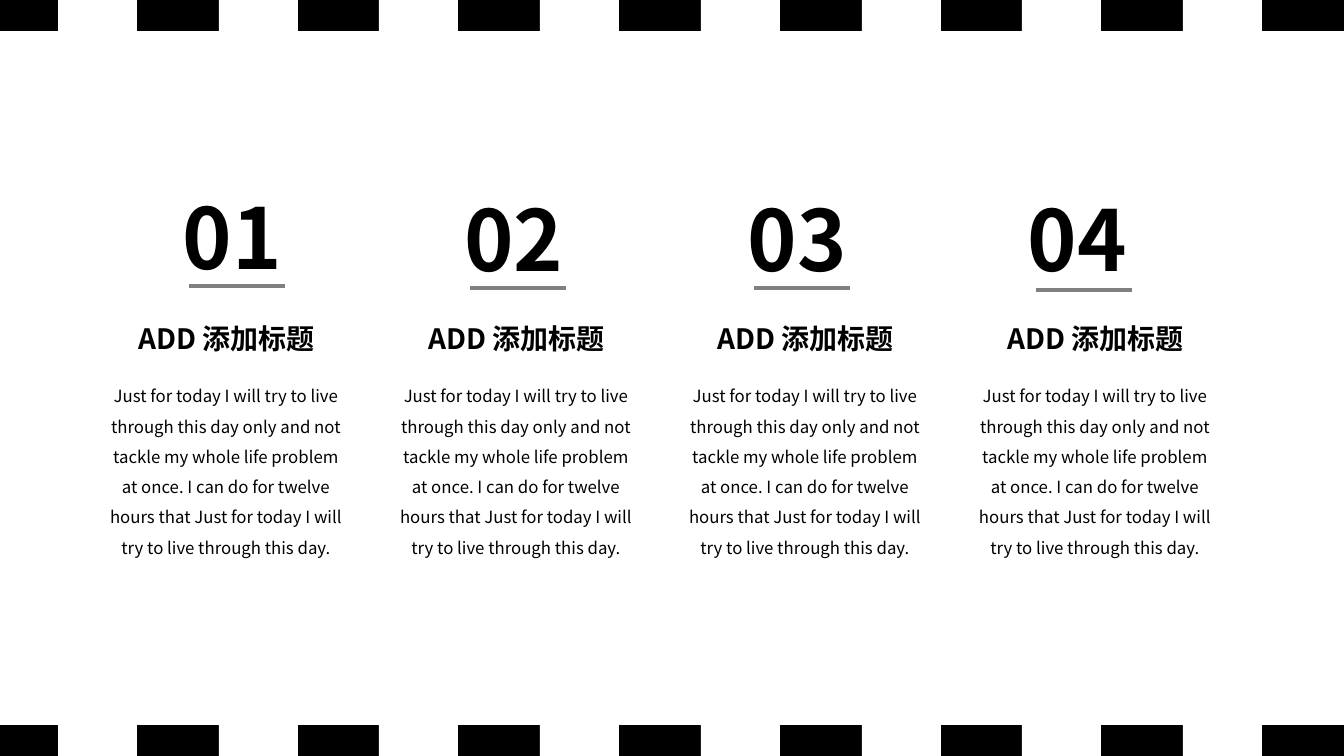
"""Build a four-column text slide framed by black and white stripes."""
from lxml.etree import SubElement
from pptx import Presentation
from pptx.dml.color import RGBColor
from pptx.enum.shapes import MSO_CONNECTOR, MSO_SHAPE
from pptx.enum.text import MSO_AUTO_SIZE as AutoSize, PP_ALIGN as Align
from pptx.oxml.ns import qn
from pptx.util import Emu, Pt

FONT = "Noto Sans CJK JP"
BLACK, WHITE, GRAY = "000000", "FFFFFF", "808080"
BODY = ("Just for today I will try to live through this day only and not "
        "tackle my whole life problem at once. I can do for twelve hours that "
        "Just for today I will try to live through this day.")


def px(length):
    return Emu(round(length * 12192000 / 1344))


def color(value):
    return RGBColor.from_string(value)


deck = Presentation()
deck.slide_width, deck.slide_height = px(1344), px(756)
page = deck.slides.add_slide(deck.slide_layouts[6])

for band_top in (0, 725):
    band = page.shapes.add_group_shape()
    stripes = [(0, 1344, BLACK)]
    stripes += [(round(58 + 1125 * i / 7), 79, WHITE) for i in range(8)]
    for left, width, fill in stripes:
        stripe = band.shapes.add_shape(
            MSO_SHAPE.RECTANGLE, px(left), px(band_top), px(width), px(31))
        stripe.shadow.inherit = False
        stripe.fill.solid()
        stripe.fill.fore_color.rgb = color(fill)
        stripe.line.fill.background()

numbers = [("01", 163, 181, 139), ("02", 434, 183, 160),
           ("03", 721, 183, 153), ("04", 1000, 183, 154)]
texts = [(number, left, top, width, 112, 60, True, 1)
         for number, left, top, width in numbers]
for i in range(4):
    column = round(80 + 869 * i / 3)
    texts += [("ADD 添加标题", column, 317, 293, 44, 20, True, 1),
              (BODY, column + 16, 371, 260, 194, 12, False, 1.5)]

for text, left, top, width, height, size, bold, spacing in texts:
    box = page.shapes.add_textbox(px(left), px(top), px(width), px(height))
    box.text_frame.word_wrap = True
    box.text_frame.auto_size = AutoSize.SHAPE_TO_FIT_TEXT
    para = box.text_frame.paragraphs[0]
    para.text = text
    para.alignment = Align.CENTER
    para.line_spacing = float(spacing)
    para.font.size = Pt(size)
    para.font.bold = bold
    para.font.color.rgb = color(BLACK)
    para.font.name = FONT
    defaults = para._p.pPr.find(qn("a:defRPr"))
    SubElement(defaults, qn("a:ea"), typeface=FONT)

for left, top in ((189, 286), (470, 288), (754, 288), (1036, 290)):
    underline = page.shapes.add_connector(
        MSO_CONNECTOR.STRAIGHT, px(left), px(top), px(left + 96), px(top))
    underline.line.color.rgb = color(GRAY)
    underline.line.width = Pt(2.25)
    SubElement(underline._element.spPr, qn("a:effectLst"))

deck.save("out.pptx")
